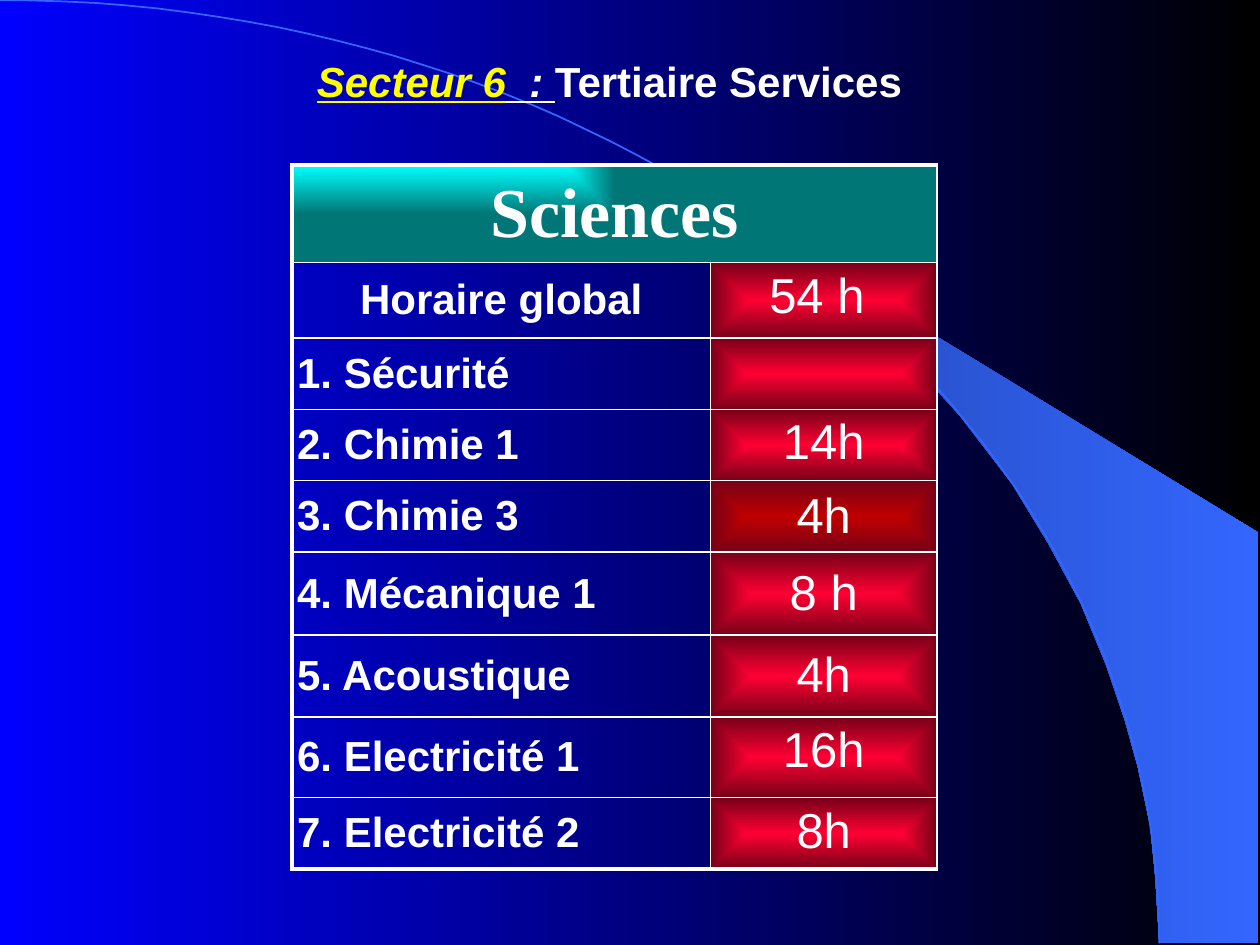
from lxml import etree
from pptx import Presentation, util as u
from pptx.dml.color import RGBColor
from pptx.enum import text
from pptx.oxml import parse_xml
from pptx.oxml.ns import nsdecls, qn

COLORS = {
    "blue": "0000FF", "black": "000000", "white": "FFFFFF", "yellow": "FFFF00",
    "wing_dark": "2449B6", "wing": "3366FF", "cyan": "00FFFF", "teal": "007676",
    "red": "FF0033", "brick": "C00000", "dark_red": "760017",
}
PLAIN_TABLE_STYLE = "{2D5ABB26-0587-4C30-8999-92F81FD0307C}"
TOP, MIDDLE = text.MSO_ANCHOR.TOP, text.MSO_ANCHOR.MIDDLE
LEFT, CENTER = text.PP_ALIGN.LEFT, text.PP_ALIGN.CENTER

# Content
TITLE = [
    ("Secteur 6", "yellow", {"italic": True, "underline": True}),
    ("  : ", "white", {"italic": True, "underline": True}),
    ("Tertiaire Services ", "white", {}),
]
HEADER, HEADER_HEIGHT = "Sciences", 1.96
# label, label alignment, hours, hours anchor, centre colour, row height in cm
ROWS = [
    ("Horaire global", CENTER, "54 h ", TOP, "red", 1.52),
    ("1. Sécurité", LEFT, "", TOP, "red", 1.44),
    ("2. Chimie 1", LEFT, "14h", TOP, "red", 1.44),
    ("3. Chimie 3", LEFT, "4h", MIDDLE, "brick", 1.44),
    ("4. Mécanique 1", LEFT, "8 h", MIDDLE, "red", 1.67),
    ("5. Acoustique", LEFT, "4h", MIDDLE, "red", 1.65),
    ("6. Electricité 1", LEFT, "16h", TOP, "red", 1.63),
    ("7. Electricité 2", LEFT, "8h", TOP, "red", 1.44),
]
COLUMN_WIDTHS = (8.43, 4.57)

# Background outlines, in hundredths of a centimetre
WING = [
    (2337, 1900), (2537, 1902), (2537, 1074), (1496, 439), (1585, 505), (1659, 564),
    (1740, 635), (1819, 711), (1935, 838), (2040, 975), (2113, 1095), (2179, 1217),
    (2230, 1341), (2268, 1453), (2294, 1547), (2319, 1666), (2329, 1768),
]
ARC_CONTROLS = [(0, 0), (1290, 0), (2337, 851), (2337, 1902)]
ARC_STEPS = 60


def rgb(name):
    return RGBColor.from_string(COLORS[name])


def fill_gradient(fill, first, last):
    fill.gradient()
    fill.gradient_angle = 0
    for stop, name in zip(fill.gradient_stops, (first, last)):
        stop.color.rgb = rgb(name)


def bezier_point(controls, t):
    weights = ((1 - t) ** 3, 3 * t * (1 - t) ** 2, 3 * t ** 2 * (1 - t), t ** 3)
    return tuple(round(sum(w * p[axis] for w, p in zip(weights, controls)))
                 for axis in (0, 1))


def add_outline(slide, points, close):
    builder = slide.shapes.build_freeform(*points[0], scale=u.Cm(0.01))
    builder.add_line_segments(points[1:], close=close)
    shape = builder.convert_to_shape()
    shape.shadow.inherit = False
    return shape


def add_run(paragraph, words, size, color="white", font="Arial", **style):
    run = paragraph.add_run()
    run.text = words
    values = {"name": font, "size": u.Pt(size), **style}
    for attribute, value in values.items():
        setattr(run.font, attribute, value)
    run.font.color.rgb = rgb(color)


def format_cell(cell, anchor, borders):
    margins = {"margin_left": 0.1, "margin_right": 0.1,
               "margin_top": 0.13, "margin_bottom": 0.13}
    for attribute, value in margins.items():
        setattr(cell, attribute, u.Cm(value))
    cell.vertical_anchor = anchor
    properties = cell._tc.get_or_add_tcPr()
    for index, (side, width) in enumerate(zip("LRTB", borders)):
        properties.insert(index, parse_xml(
            f'<a:ln{side} {nsdecls("a")} w="{u.Pt(width)}"><a:solidFill>'
            f'<a:srgbClr val="{COLORS["white"]}"/></a:solidFill></a:ln{side}>'))


def fill_path(cell, first, last, kind, focus):
    fill_gradient(cell.fill, first, last)
    gradient = cell._tc.tcPr.find(qn("a:gradFill"))
    gradient.remove(gradient.find(qn("a:lin")))
    path_element = etree.SubElement(gradient, qn("a:path"), {"path": kind})
    etree.SubElement(path_element, qn("a:fillToRect"),
                     {side: str(value * 1000) for side, value in zip("ltrb", focus)})


def add_background(slide):
    fill_gradient(slide.background.fill, "blue", "black")
    wing = add_outline(slide, WING, True)
    fill_gradient(wing.fill, "wing_dark", "wing")
    wing.line.fill.background()
    arc = add_outline(slide, [bezier_point(ARC_CONTROLS, i / ARC_STEPS)
                              for i in range(ARC_STEPS + 1)], False)
    arc.fill.background()
    arc.line.color.rgb = rgb("wing")
    arc.line.width = u.Pt(1)


def add_hours_table(slide):
    heights = [HEADER_HEIGHT] + [row[-1] for row in ROWS]
    frame = slide.shapes.add_table(len(heights), 2, u.Cm(5.89), u.Cm(3.33),
                                   u.Cm(sum(COLUMN_WIDTHS)), u.Cm(sum(heights)))
    table = frame.table
    table.first_row = table.horz_banding = False
    table._tbl.tblPr.find(qn("a:tableStyleId")).text = PLAIN_TABLE_STYLE
    for column, width in zip(table.columns, COLUMN_WIDTHS):
        column.width = u.Cm(width)
    for row, height in zip(table.rows, heights):
        row.height = u.Cm(height)

    # Header across both columns
    header = table.cell(0, 0)
    header.merge(table.cell(0, 1))
    fill_path(header, "cyan", "teal", "rect", (0, 0, 100, 100))
    format_cell(header, MIDDLE, (2.25, 1, 2.25, 1))
    format_cell(table.cell(0, 1), MIDDLE, (1, 1, 2.25, 1))
    paragraph = header.text_frame.paragraphs[0]
    paragraph.alignment = CENTER
    add_run(paragraph, HEADER, 40, font="Times New Roman", bold=True)

    # Topics and hours
    for index, (label, alignment, hours, anchor, color, _) in enumerate(ROWS, 1):
        bottom = 2.25 if index == len(ROWS) else 1
        topic_cell, hours_cell = table.cell(index, 0), table.cell(index, 1)
        topic_cell.fill.background()
        fill_path(hours_cell, color, "dark_red", "rect", (50, 50, 50, 50))
        format_cell(topic_cell, MIDDLE, (2.25, 1, 1, bottom))
        format_cell(hours_cell, anchor, (1, 1, 1, bottom))
        paragraph = topic_cell.text_frame.paragraphs[0]
        paragraph.alignment = alignment
        add_run(paragraph, label, 24, bold=True)
        if hours:
            paragraph = hours_cell.text_frame.paragraphs[0]
            paragraph.alignment = CENTER
            add_run(paragraph, hours, 28, bold=False)


def add_title(slide):
    box = slide.shapes.add_textbox(u.Cm(2.31), u.Cm(0.99), u.Cm(20.19), u.Cm(1.27))
    box.text_frame.word_wrap = True
    paragraph = box.text_frame.paragraphs[0]
    paragraph.alignment = CENTER
    for words, color, style in TITLE:
        add_run(paragraph, words, 24, color, bold=True, **style)


def main():
    presentation = Presentation()
    presentation.slide_width, presentation.slide_height = u.Cm(25.4), u.Cm(19.05)
    slide = presentation.slides.add_slide(presentation.slide_layouts[6])
    add_background(slide)
    add_hours_table(slide)
    add_title(slide)
    presentation.save("out.pptx")


if __name__ == "__main__":
    main()
